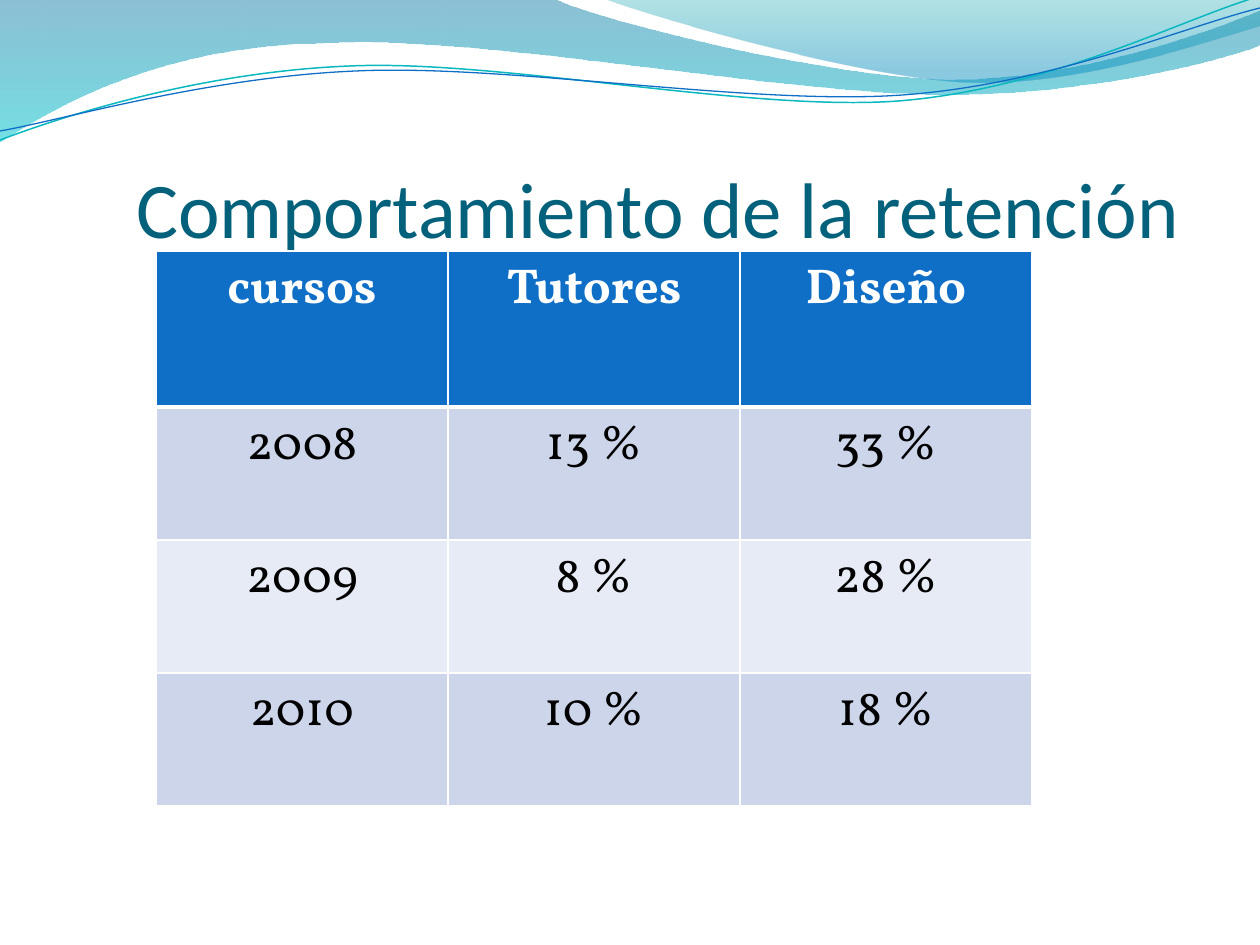
from itertools import chain

from lxml import etree
from pptx import Presentation
from pptx import util as u
from pptx.dml.color import RGBColor
from pptx.enum import text
from pptx.oxml.ns import qn

PX = 914400 // 126

TITLE = "Comportamiento de la retención "
ROWS = [
    ("cursos", "Tutores", "Diseño"),
    ("2008", "13 %", "33 %"),
    ("2009", "8 %", "28 %"),
    ("2010", "10 %", "18 %"),
]
TABLE_LEFT, TABLE_TOP = 156, 251
COLUMN_WIDTH, HEADER_HEIGHT, ROW_HEIGHT = 292, 156, 133
HEADER_FILL, BAND_FILLS = "0F6FC6", ("CCD5EA", "E7EBF5")

# Each outline: a start point, then lines (1 point) or Bézier curves (3 points).
# Gradient stops: position, colour, opacity in percent.
BANDS = [
    ([(0, 0), [(554, -1)],
      [(600, 21), (837, 79), (955, 79)], [(1075, 79), (1207, 33), (1260, 11)],
      [(1261, 45)],
      [(1239, 55), (1096, 96), (940, 94)], [(781, 94), (481, 35), (324, 43)],
      [(163, 45), (58, 105), (-1, 142)], [(0, 0)]],
     [(0, "0074A1", 45), (1, "00C6CF", 55)]),
    ([(604, -1),
      [(641, 14), (859, 78), (969, 82)], [(1079, 86), (1211, 40), (1260, 26)],
      [(1260, 0)], [(604, -1)]],
     [(0, "00A1A9", 30), (0.8, "008BBF", 45)]),
]
WAVES = [
    ([(0, 140), [(60, 117), (199, 72), (349, 66)],
      [(498, 59), (747, 112), (898, 101)], [(1050, 89), (1182, 19), (1257, -3)]],
     "0AB8BF", 0.85),
    ([(0, 131), [(59, 121), (207, 77), (357, 71)],
      [(508, 64), (752, 106), (903, 95)], [(1053, 84), (1186, 26), (1260, 8)]],
     "0F6FC6", 0.75),
]


def px(n):
    return u.Emu(n * PX)


def color(hex_string):
    return RGBColor.from_string(hex_string)


def add_outline(slide, outline, close):
    start, *segments = outline
    builder = slide.shapes.build_freeform(*start, scale=PX)
    builder.add_line_segments(chain.from_iterable(segments), close=close)
    shape = builder.convert_to_shape()
    shape.shadow.inherit = False

    # Join the three points of each curve into one Bézier segment
    lines = iter(list(shape.element.spPr.iter(qn("a:lnTo"))))
    for segment in segments:
        parts = [next(lines) for _ in segment]
        if len(parts) == 3:
            curve = etree.Element(qn("a:cubicBezTo"))
            parts[0].addprevious(curve)
            for part in parts:
                curve.append(part[0])
                part.getparent().remove(part)
    return shape


def add_band(slide, outline, stops):
    band = add_outline(slide, outline, True)
    band.line.fill.background()
    band.fill.gradient()
    band.fill.gradient_angle = 270
    for stop, (position, hex_string, _) in zip(band.fill.gradient_stops, stops):
        stop.position = position
        stop.color.rgb = color(hex_string)
    for rgb, (_, _, opacity) in zip(band.element.spPr.iter(qn("a:srgbClr")), stops):
        etree.SubElement(rgb, qn("a:alpha"), val=str(opacity * 1000))


def add_wave(slide, outline, hex_string, width):
    wave = add_outline(slide, outline, False)
    wave.fill.background()
    wave.line.color.rgb = color(hex_string)
    wave.line.width = u.Pt(width)


def set_borders(cell, widths):
    for side, width in widths.items():
        line = etree.SubElement(cell._tc.get_or_add_tcPr(), qn(f"a:ln{side}"),
                                w=str(u.Pt(width)))
        fill = etree.SubElement(line, qn("a:solidFill"))
        etree.SubElement(fill, qn("a:srgbClr"), val="FFFFFF")


def add_retention_table(slide):
    heights = [HEADER_HEIGHT] + [ROW_HEIGHT] * (len(ROWS) - 1)
    columns = len(ROWS[0])
    table = slide.shapes.add_table(
        len(ROWS), columns, px(TABLE_LEFT), px(TABLE_TOP),
        px(COLUMN_WIDTH * columns), px(sum(heights))).table
    for column in table.columns:
        column.width = px(COLUMN_WIDTH)
    for r, values in enumerate(ROWS):
        table.rows[r].height = px(heights[r])
        header = r == 0
        for c, value in enumerate(values):
            cell = table.cell(r, c)
            set_borders(cell, {"L": 1, "R": 1, "T": 3 if r == 1 else 1,
                               "B": 3 if header else 1})
            cell.fill.solid()
            cell.fill.fore_color.rgb = color(
                HEADER_FILL if header else BAND_FILLS[(r - 1) % 2])
            cell.text = value
            paragraph = cell.text_frame.paragraphs[0]
            paragraph.alignment = text.PP_ALIGN.CENTER
            font = paragraph.font
            font.name, font.size, font.bold = "Vollkorn", u.Pt(28), header
            font.color.rgb = color("FFFFFF" if header else "000000")


def add_title(slide):
    title = slide.shapes.title
    title.left, title.top, title.width, title.height = map(px, (63, 97, 1134, 157))
    frame = title.text_frame
    frame.text = TITLE
    frame.word_wrap = True
    frame.auto_size = text.MSO_AUTO_SIZE.NONE
    frame.vertical_anchor = text.MSO_ANCHOR.BOTTOM
    frame.margin_left = frame.margin_right = frame.margin_bottom = 0
    frame.margin_top = px(6)
    paragraph = frame.paragraphs[0]
    paragraph.alignment = text.PP_ALIGN.RIGHT
    paragraph.font.name, paragraph.font.size = "Calibri", u.Pt(45)
    paragraph.font.color.rgb = color("04617B")


def main():
    deck = Presentation()
    deck.slide_width, deck.slide_height = u.Inches(10), u.Inches(7.5)
    slide = deck.slides.add_slide(deck.slide_layouts[5])

    # Decoration along the top
    for band in BANDS:
        add_band(slide, *band)
    for wave in WAVES:
        add_wave(slide, *wave)

    # Content
    add_title(slide)
    add_retention_table(slide)
    deck.save("out.pptx")


if __name__ == "__main__":
    main()
